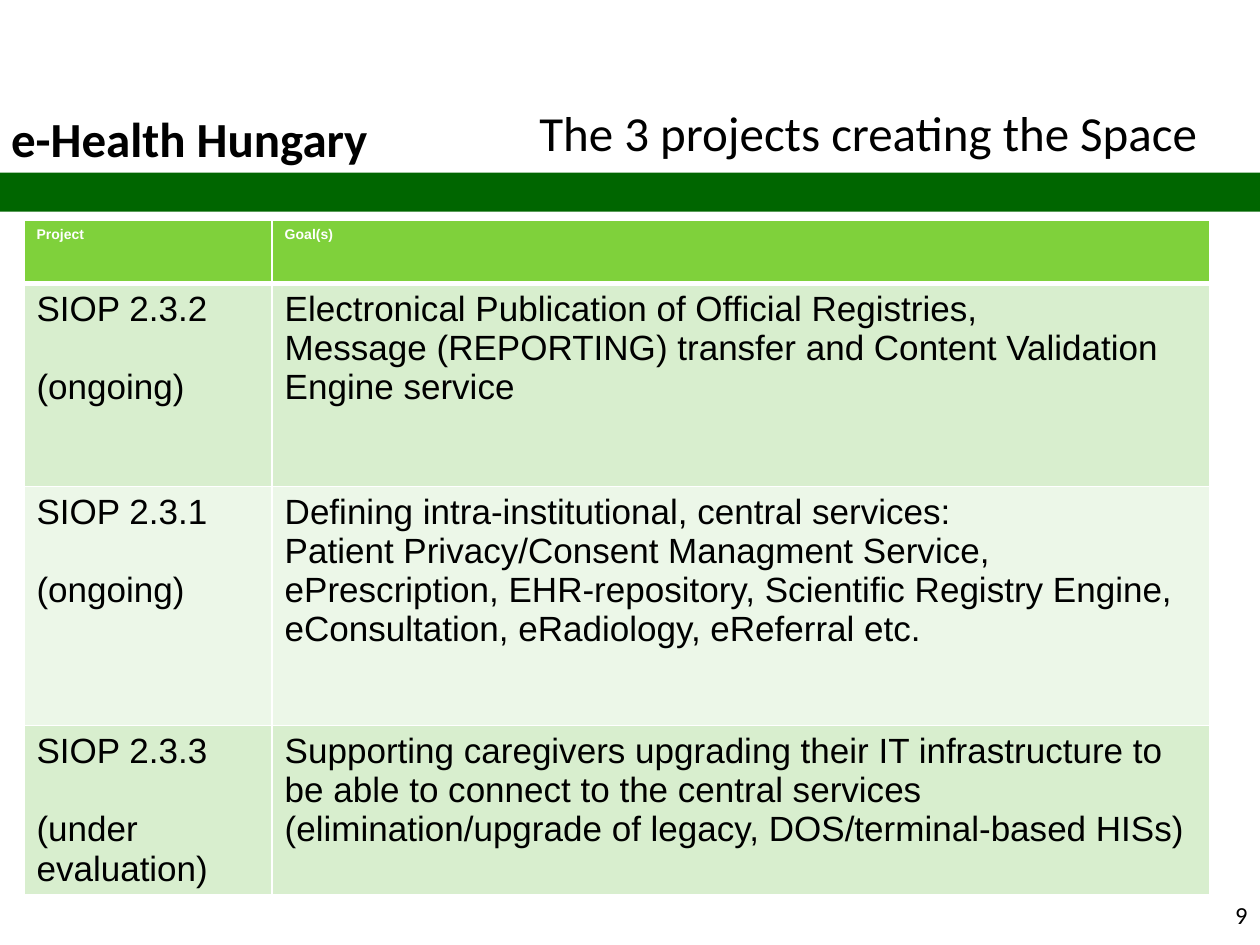
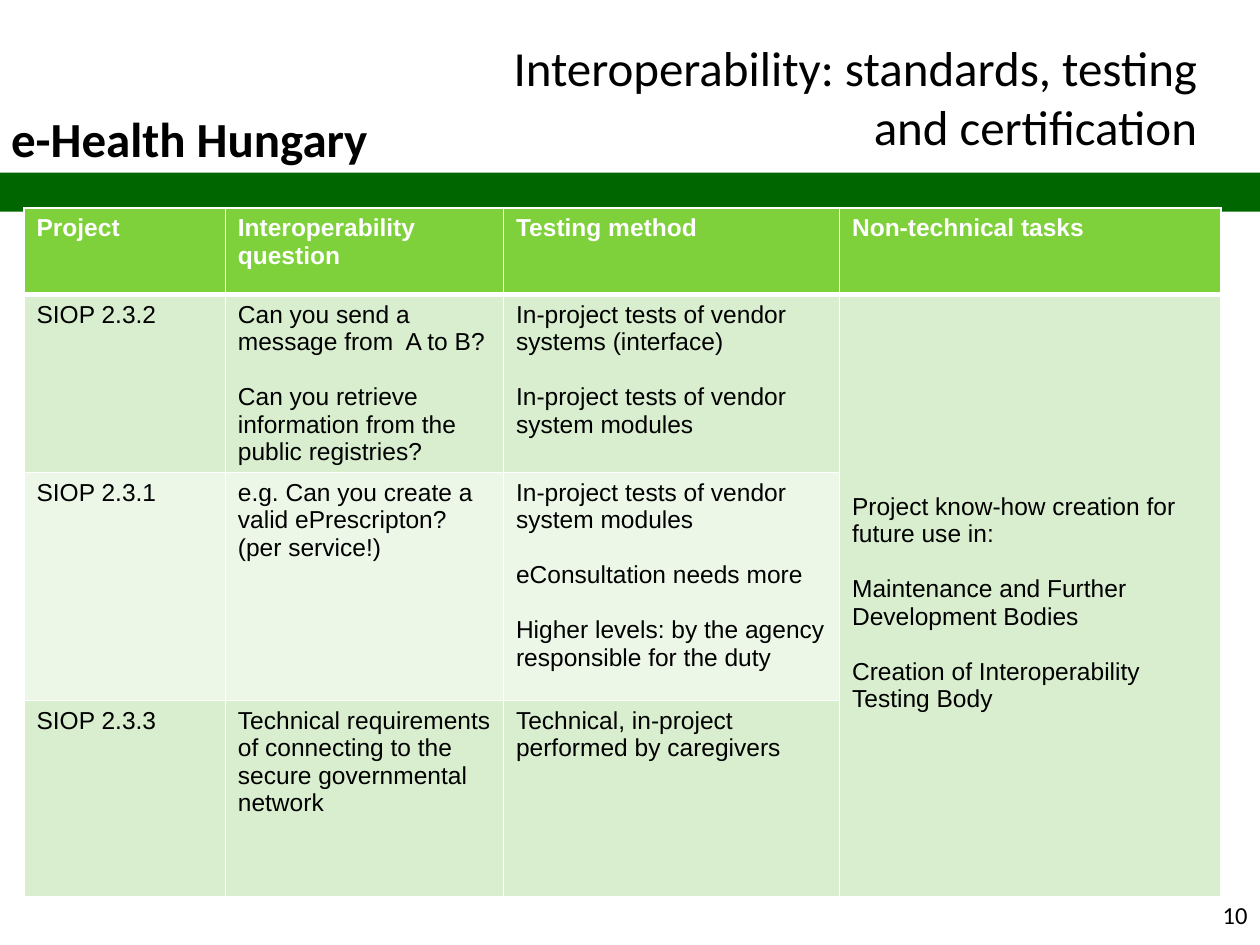
from lxml import etree
from pptx import Presentation
from pptx import util as u
from pptx.dml.color import RGBColor
from pptx.enum import shapes, text
from pptx.oxml.ns import qn

BLACK = RGBColor(0x00, 0x00, 0x00)
WHITE = RGBColor(0xFF, 0xFF, 0xFF)
BAND_GREEN = RGBColor(0x00, 0x66, 0x00)
HEADER_GREEN = RGBColor(0x7F, 0xD1, 0x3B)
ROW_GREENS = RGBColor(0xD8, 0xEE, 0xCE), RGBColor(0xEC, 0xF7, 0xE8)

W, H = u.Inches(10), u.Inches(7.5)
COL, ROW = W / 100, H / 75
LINE_HEIGHT = 1.12

BAND_BOX = 0, 13.7, 100, 3.1
BRAND_BOX = -0.1, 8.1, 34.4, 5.7
NUMBER_BOX = 76.7, 70.9, 23.3, 3.8

PROJECTS = {
    "title": "The 3 projects creating the Space",
    "title_box": (34, 7.6, 62, 5.7),
    "number": 9,
    "table_box": (1.9, 17.5, 94.1, 52.7),
    "cols": (1.97, 7.44),
    "rows": (0.5, 1.61, 1.9, 1.26),
    "sizes": (8, 20),
    "cells": [
        ["Project", "Goal(s)"],
        ["SIOP 2.3.2\n\n(ongoing)",
         "Electronical Publication of Official Registries,\n"
         "Message (REPORTING) transfer and Content Validation Engine service"],
        ["SIOP 2.3.1\n\n(ongoing)",
         "Defining intra-institutional, central services:\n"
         "Patient Privacy/Consent Managment Service, ePrescription, EHR-repository, "
         "Scientific Registry Engine, eConsultation, eRadiology, eReferral etc."],
        ["SIOP 2.3.3\n\n(under evaluation)",
         "Supporting caregivers upgrading their IT infrastructure to be able to connect "
         "to the central services (elimination/upgrade of legacy, DOS/terminal-based HISs)"],
    ],
}

INTEROPERABILITY = {
    "title": "Interoperability: standards, testing and certification",
    "title_box": (34, 2.5, 62, 10.4),
    "number": 10,
    "table_box": (1.9, 16.5, 95, 54.4),
    "cols": (1.6, 2.21, 2.67, 3.03),
    "rows": (0.69, 1.38, 1.81, 1.56),
    "sizes": (14, 14),
    "cells": [
        ["Project", "Interoperability question", "Testing method", "Non-technical tasks"],
        ["SIOP 2.3.2",
         "Can you send a message from  A to B?\n\n"
         "Can you retrieve information from the public registries?",
         "In-project tests of vendor systems (interface)\n\n"
         "In-project tests of vendor system modules",
         "Project know-how creation for future use in:\n\n"
         "Maintenance and Further Development Bodies\n\n"
         "Creation of Interoperability Testing Body"],
        ["SIOP 2.3.1",
         "e.g. Can you create a valid ePrescripton?\n(per service!)",
         "In-project tests of vendor system modules\n\neConsultation needs more\n\n"
         "Higher levels: by the agency responsible for the duty"],
        ["SIOP 2.3.3",
         "Technical requirements of connecting to the secure governmental network",
         "Technical, in-project performed by caregivers"],
    ],
}


def place(box):
    x, y, w, h = box
    return [round(v) for v in (x * COL, y * ROW, w * COL, h * ROW)]


def set_font(p, name, size, color=BLACK, bold=False):
    p.font.name, p.font.size, p.font.bold = name, u.Pt(size), bold
    p.font.color.rgb = color


def write_line(tf, line, size, align=text.PP_ALIGN.LEFT, bold=False):
    tf.word_wrap = True
    tf.auto_size = text.MSO_AUTO_SIZE.NONE
    tf.vertical_anchor = text.MSO_ANCHOR.TOP
    p = tf.paragraphs[0]
    p.text, p.alignment = line, align
    set_font(p, "Calibri", size, bold=bold)


def add_frame(slide, title, title_box, number):
    band = slide.shapes.add_shape(shapes.MSO_SHAPE.RECTANGLE, *place(BAND_BOX))
    band.shadow.inherit = False
    band.fill.solid()
    band.fill.fore_color.rgb = BAND_GREEN
    band.line.fill.background()

    brand = slide.shapes.add_textbox(*place(BRAND_BOX))
    write_line(brand.text_frame, "e-Health Hungary", 28, bold=True)
    page = slide.shapes.add_textbox(*place(NUMBER_BOX))
    write_line(page.text_frame, str(number), 14, text.PP_ALIGN.RIGHT)

    heading = slide.shapes.title
    heading.left, heading.top, heading.width, heading.height = place(title_box)
    write_line(heading.text_frame, title, 28, text.PP_ALIGN.RIGHT)


def set_borders(cell, **widths):
    tc_pr = cell._tc.get_or_add_tcPr()
    for side in "LRTB":
        ln = etree.SubElement(tc_pr, qn(f"a:ln{side}"), w=str(u.Pt(widths.get(side, 1))))
        fill = etree.SubElement(ln, qn("a:solidFill"))
        etree.SubElement(fill, qn("a:srgbClr"), val=str(WHITE))


def write_cell(cell, content, size, color, bold):
    tf = cell.text_frame
    p = tf.paragraphs[0]
    for b, block in enumerate(content.split("\n\n")):
        for n, line in enumerate(block.split("\n")):
            if b or n:
                p = tf.add_paragraph()
            p.text = line
            set_font(p, "Arial", size, color, bold)
            if b and not n:
                p.space_before = u.Pt(size * LINE_HEIGHT)


def add_project_table(slide, box, cols, rows, sizes, cells):
    x, y, w, h = place(box)
    table = slide.shapes.add_table(len(rows), len(cols), x, y, w, h).table
    for column, share in zip(table.columns, cols):
        column.width = round(w * share / sum(cols))
    for row, share in zip(table.rows, rows):
        row.height = round(h * share / sum(rows))
    if len(cells[-1]) < len(cols):
        shared = table.cell(1, len(cols) - 1)
        shared.merge(table.cell(len(rows) - 1, len(cols) - 1))
        shared.margin_top = u.Inches(0.05) + u.Pt(7 * sizes[1] * LINE_HEIGHT)

    for i, contents in enumerate(cells):
        header = i == 0
        for j, content in enumerate(contents):
            cell = table.cell(i, j)
            set_borders(cell, T=3 if i == 1 else 1, B=3 if header else 1)
            cell.fill.solid()
            cell.fill.fore_color.rgb = HEADER_GREEN if header else ROW_GREENS[(i - 1) % 2]
            write_cell(cell, content, sizes[min(i, 1)], WHITE if header else BLACK, header)


def add_table_slide(prs, page):
    slide = prs.slides.add_slide(prs.slide_layouts[5])
    add_frame(slide, page["title"], page["title_box"], page["number"])
    add_project_table(slide, page["table_box"], page["cols"], page["rows"],
                      page["sizes"], page["cells"])


def main():
    prs = Presentation()
    prs.slide_width, prs.slide_height = W, H
    for page in (PROJECTS, INTEROPERABILITY):
        add_table_slide(prs, page)
    prs.save("out.pptx")


if __name__ == "__main__":
    main()
